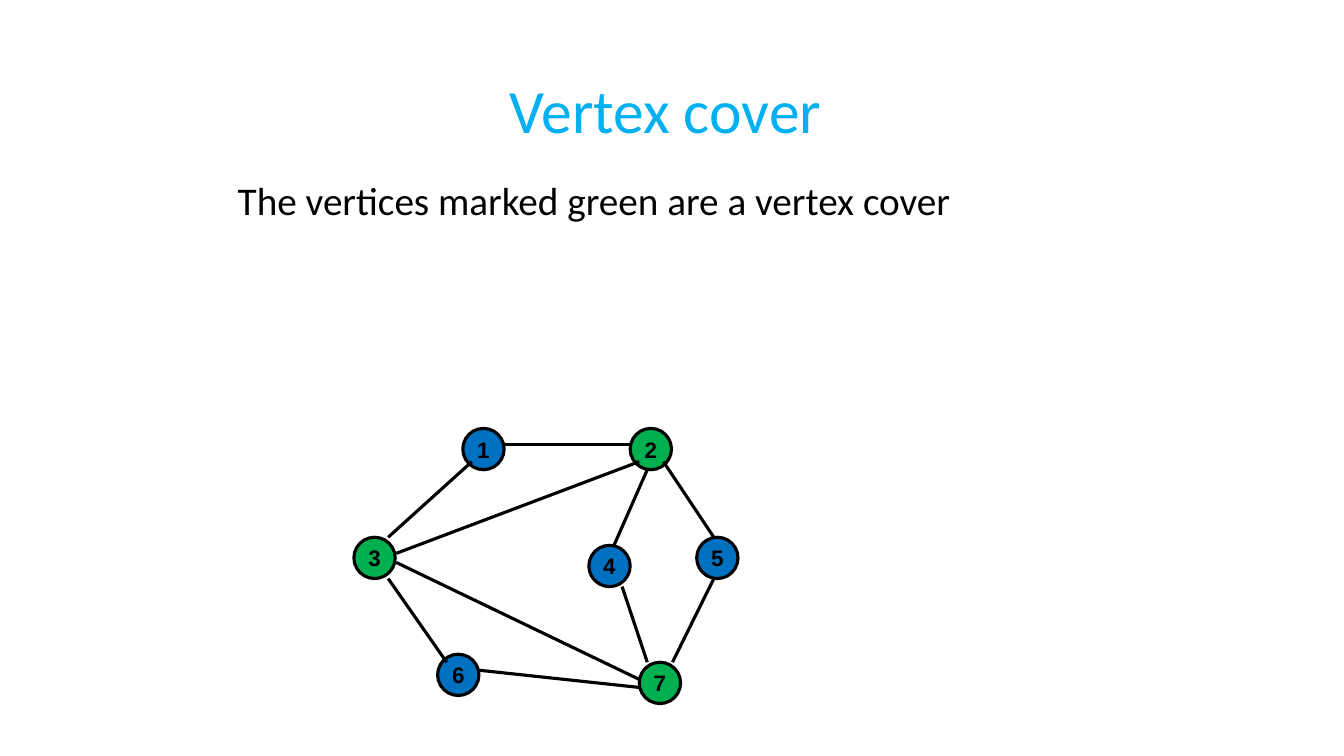
from lxml.etree import SubElement
from pptx import Presentation
from pptx.dml.color import RGBColor
from pptx.enum.shapes import MSO_CONNECTOR as Connector, MSO_SHAPE as Shape
from pptx.enum.text import MSO_ANCHOR as Anchor, MSO_AUTO_SIZE as AutoSize, PP_ALIGN as Align
from pptx.oxml.ns import qn
from pptx.util import Pt

EMU_PER_PX = 9144
BLACK, SKY, BLUE, GREEN = "000000", "00B0F0", "0070C0", "00B050"
VERTEX_SIZE = 41

VERTICES = [
    ("1", 459, 425, BLUE),
    ("3", 351, 533, GREEN),
    ("2", 625, 425, GREEN),
    ("6", 434, 649, BLUE),
    ("7", 634, 657, GREEN),
    ("4", 584, 541, BLUE),
    ("5", 691, 533, BLUE),
]
EDGES = [
    (385, 533, 468, 458),
    (501, 441, 625, 441),
    (658, 458, 708, 533),
    (642, 466, 609, 541),
    (393, 549, 634, 458),
    (385, 574, 443, 657),
    (393, 558, 634, 674),
    (476, 665, 634, 682),
    (617, 582, 642, 657),
    (708, 574, 667, 657),
]


def px(*lengths):
    return [length * EMU_PER_PX for length in lengths]


def color(value):
    return RGBColor.from_string(value)


class GraphSlide:
    text_font = "Calibri"
    label_font = "Arial"
    line_width = Pt(2.25)

    def __init__(self, presentation):
        self.slide = presentation.slides.add_slide(presentation.slide_layouts[1])

    def set_font(self, paragraph, name, size, text_color, bold=False):
        font = paragraph.font
        font.name, font.size, font.bold = name, Pt(size), bold
        font.color.rgb = color(text_color)

    def set_line(self, line):
        line.color.rgb = color(BLACK)
        line.width = self.line_width

    def placeholder(self, index, text, box, size, text_color, align, anchor, space_before=0):
        shape = self.slide.placeholders[index]
        shape.left, shape.top, shape.width, shape.height = px(*box)
        frame = shape.text_frame
        frame.text = text
        frame.word_wrap = True
        frame.auto_size = AutoSize.NONE
        frame.vertical_anchor = anchor
        paragraph = frame.paragraphs[0]
        properties = paragraph._p.get_or_add_pPr()
        properties.set("marL", "0")
        properties.set("indent", "0")
        SubElement(properties, qn("a:buNone"))
        paragraph.alignment = align
        paragraph.line_spacing = 0.9
        paragraph.space_before = Pt(space_before)
        self.set_font(paragraph, self.text_font, size, text_color)

    def vertex(self, label, left, top, fill):
        shape = self.slide.shapes.add_shape(Shape.OVAL, *px(left, top, VERTEX_SIZE, VERTEX_SIZE))
        shape.shadow.inherit = False
        shape.fill.solid()
        shape.fill.fore_color.rgb = color(fill)
        self.set_line(shape.line)
        frame = shape.text_frame
        frame.text = label
        frame.word_wrap = False
        frame.vertical_anchor = Anchor.MIDDLE
        paragraph = frame.paragraphs[0]
        paragraph.alignment = Align.CENTER
        self.set_font(paragraph, self.label_font, 16, BLACK, bold=True)

    def edge(self, *ends):
        connector = self.slide.shapes.add_connector(Connector.STRAIGHT, *px(*ends))
        self.set_line(connector.line)
        SubElement(connector._element.spPr, qn("a:effectLst"))


def main():
    presentation = Presentation()
    presentation.slide_width, presentation.slide_height = px(1333, 750)
    graph = GraphSlide(presentation)
    graph.placeholder(0, "Vertex cover ", (92, 40, 1150, 145), 44, SKY,
                      Align.CENTER, Anchor.MIDDLE)
    graph.placeholder(1, " The vertices marked green are a vertex cover",
                      (217, 175, 900, 225), 28, BLACK, Align.LEFT, Anchor.TOP, space_before=10)
    for vertex in VERTICES:
        graph.vertex(*vertex)
    for edge in EDGES:
        graph.edge(*edge)
    presentation.save("out.pptx")


if __name__ == "__main__":
    main()
